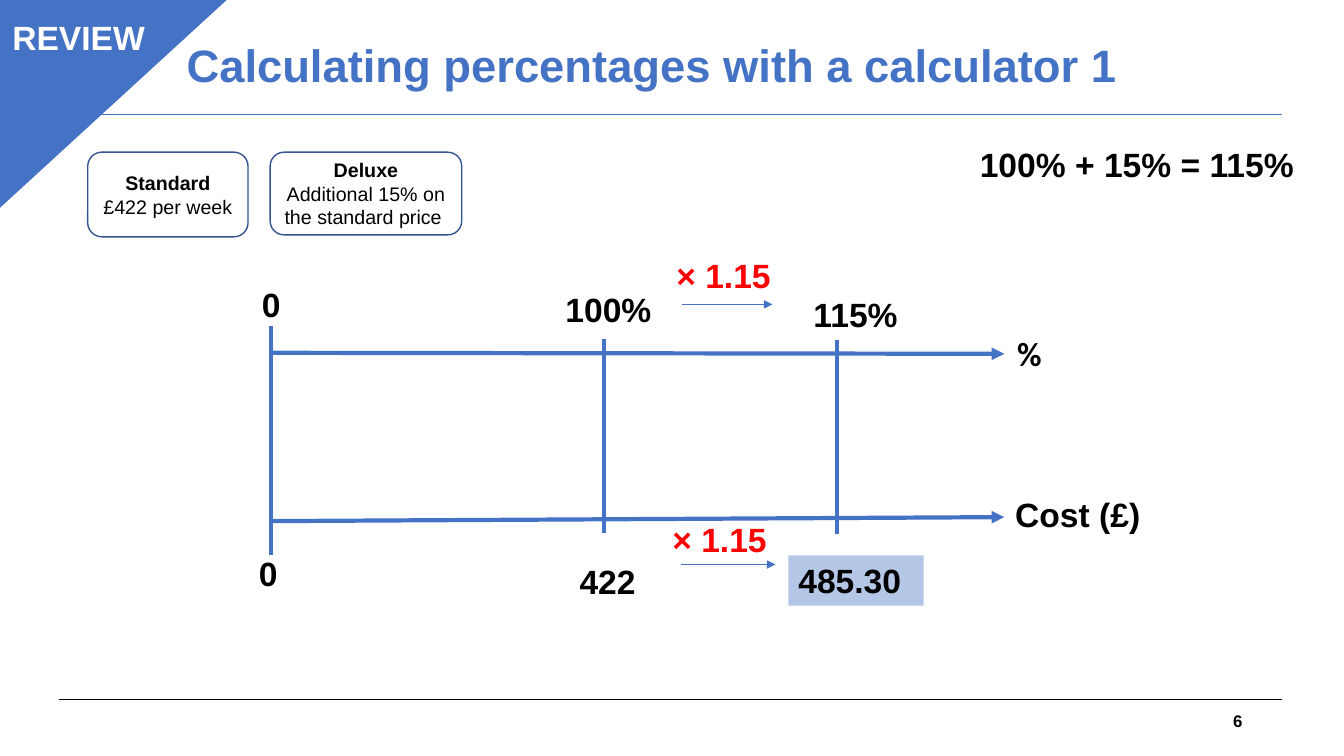
"""Build the review slide on percentage increases with a double number line."""
from dataclasses import dataclass

from lxml.etree import SubElement
from pptx import Presentation
from pptx.dml.color import RGBColor
from pptx.enum.shapes import MSO_CONNECTOR, MSO_SHAPE
from pptx.enum.text import MSO_ANCHOR, MSO_AUTO_SIZE, PP_ALIGN
from pptx.oxml.ns import qn
from pptx.util import Inches, Pt


@dataclass(frozen=True)
class Theme:
    blue: str = "4472C4"
    outline: str = "325491"
    highlight: str = "B4C7E7"
    black: str = "000000"
    white: str = "FFFFFF"
    red: str = "FF0000"
    font: str = "Arial"
    symbol_font: str = "Calibri"
    title: float = 32.4
    label: float = 24
    card: float = 14
    number: float = 12
    thick: float = 3
    rule: float = 0.75
    thin: float = 0.5


THEME = Theme()
WIDTH, HEIGHT = 13.33, 7.5
LABEL_HEIGHT = 0.5

TITLE = "Calculating percentages with a calculator 1"
PAGE_NUMBER = "6"
BADGE = "REVIEW"
CARDS = [
    ((0.87, 1.51, 1.59, 0.84), ["Standard", "£422 per week"]),
    ((2.68, 1.51, 1.9, 0.82), ["Deluxe", "Additional 15% on the standard price "]),
]

COLUMNS = {"zero": 2.69, "whole": 5.99, "raised": 8.3, "end": 9.96}
ROWS = {"percent": 3.51, "cost": 5.15}
MARGINS = (0.59, 12.72)
RULES = [(6.94, THEME.black), (1.14, THEME.blue)]
AXES = [
    (COLUMNS["zero"], ROWS["percent"] - 0.01, COLUMNS["end"], ROWS["percent"]),
    (COLUMNS["zero"], ROWS["cost"] + 0.02, COLUMNS["end"], ROWS["cost"] - 0.02),
]
TICKS = [("zero", 0.28, 0.36), ("whole", 0.15, 0.14), ("raised", 0.14, 0.15)]
MULTIPLIERS = [(6.76, 3.02, 7.66), (6.75, 5.6, 7.69)]

LABELS = [
    ("100% + 15% = 115%", 9.62, 1.38, 3.37, {}),
    ("× 1.15", 6.61, 2.48, 1.25, {"color": THEME.red}),
    ("× 1.15", 6.57, 5.1, 1.41, {"color": THEME.red}),
    ("%", 9.99, 3.25, 0.45, {"name": THEME.symbol_font}),
    ("Cost (£)", 9.97, 4.85, 1.52, {}),
    ("0", COLUMNS["zero"] - 0.19, 2.77, 0.42, {}),
    ("100%", COLUMNS["whole"] - 0.48, 2.82, 1.13, {}),
    ("115%", COLUMNS["raised"] - 0.33, 2.87, 1.13, {}),
    ("0", COLUMNS["zero"] - 0.22, 5.44, 0.42, {}),
    ("422", COLUMNS["whole"] - 0.34, 5.52, 1.13, {}),
]
ANSWER = ("485.30", (7.82, 5.51, 1.34, LABEL_HEIGHT))


def inches(values):
    return [Inches(value) for value in values]


def write(shape, lines, size, align=PP_ALIGN.LEFT, anchor=MSO_ANCHOR.TOP, **changes):
    frame = shape.text_frame
    frame.word_wrap = True
    frame.vertical_anchor = anchor
    frame.text = "\n".join(lines)
    for index, para in enumerate(frame.paragraphs):
        para.alignment = align
        style = {"name": THEME.font, "size": Pt(size), "bold": index == 0,
                 "color": THEME.black, **changes}
        color = style.pop("color")
        for span in para.runs:
            for attribute, value in style.items():
                setattr(span.font, attribute, value)
            span.font.color.rgb = RGBColor.from_string(color)
    return frame


def add_box(page, kind, place, fill, line=None, width=1):
    box = page.shapes.add_shape(kind, *inches(place))
    box.shadow.inherit = False
    box.fill.solid()
    box.fill.fore_color.rgb = RGBColor.from_string(fill)
    if line:
        box.line.color.rgb = RGBColor.from_string(line)
        box.line.width = Pt(width)
    else:
        box.line.fill.background()
    return box


def add_line(page, ends, width, color=THEME.blue, arrow=False):
    line = page.shapes.add_connector(MSO_CONNECTOR.STRAIGHT, *inches(ends))
    line.line.color.rgb = RGBColor.from_string(color)
    line.line.width = Pt(width)
    if arrow:
        SubElement(line.line._get_or_add_ln(), qn("a:tailEnd"), type="triangle")
    SubElement(line.element.spPr, qn("a:effectLst"))


def add_header(page):
    title = page.shapes.title
    title.left, title.top, title.width, title.height = inches((1.75, 0.12, 10, 1.11))
    frame = write(title, [TITLE], THEME.title, anchor=MSO_ANCHOR.MIDDLE, color=THEME.blue)
    frame.auto_size = MSO_AUTO_SIZE.NONE
    frame.paragraphs[0].line_spacing = 0.9

    left, right = MARGINS
    for row, color in RULES:
        add_line(page, (left, row, right, row), THEME.rule, color)
    number = page.shapes.add_textbox(*inches((9.42, 6.95, 3, 0.4)))
    write(number, [PAGE_NUMBER], THEME.number, PP_ALIGN.RIGHT, MSO_ANCHOR.MIDDLE)

    corner = add_box(page, MSO_SHAPE.ISOSCELES_TRIANGLE, (-0.03, -0.02, 2.29, 2.1),
                     THEME.blue, THEME.blue)
    corner.adjustments[0] = 0
    corner.element.spPr.find(qn("a:xfrm")).set("flipV", "1")
    badge = add_box(page, MSO_SHAPE.RECTANGLE, (0.01, 0.12, 1.54, LABEL_HEIGHT),
                    THEME.blue, THEME.blue, THEME.rule)
    write(badge, [BADGE], THEME.label, PP_ALIGN.CENTER, color=THEME.white)


def add_number_lines(page):
    for ends in AXES:
        add_line(page, ends, THEME.thick, arrow=True)
    for column, above, below in TICKS:
        center = COLUMNS[column]
        ends = (center, ROWS["cost"] + below, center, ROWS["percent"] - above)
        add_line(page, ends, THEME.thick)
    for start, row, end in MULTIPLIERS:
        add_line(page, (start, row, end, row), THEME.thin, arrow=True)


def add_labels(page):
    for words, left, top, width, changes in LABELS:
        label = page.shapes.add_textbox(*inches((left, top, width, LABEL_HEIGHT)))
        frame = write(label, [words], THEME.label, **changes)
        frame.word_wrap = words != "%"
        frame.auto_size = MSO_AUTO_SIZE.SHAPE_TO_FIT_TEXT
    words, place = ANSWER
    answer = add_box(page, MSO_SHAPE.RECTANGLE, place, THEME.highlight)
    write(answer, [words], THEME.label)


def main():
    deck = Presentation()
    deck.slide_width, deck.slide_height = inches((WIDTH, HEIGHT))
    page = deck.slides.add_slide(deck.slide_layouts[5])
    add_header(page)
    for place, lines in CARDS:
        card = add_box(page, MSO_SHAPE.ROUNDED_RECTANGLE, place, THEME.white, THEME.outline)
        write(card, lines, THEME.card, PP_ALIGN.CENTER, MSO_ANCHOR.MIDDLE)
    add_number_lines(page)
    add_labels(page)
    deck.save("out.pptx")


if __name__ == "__main__":
    main()
